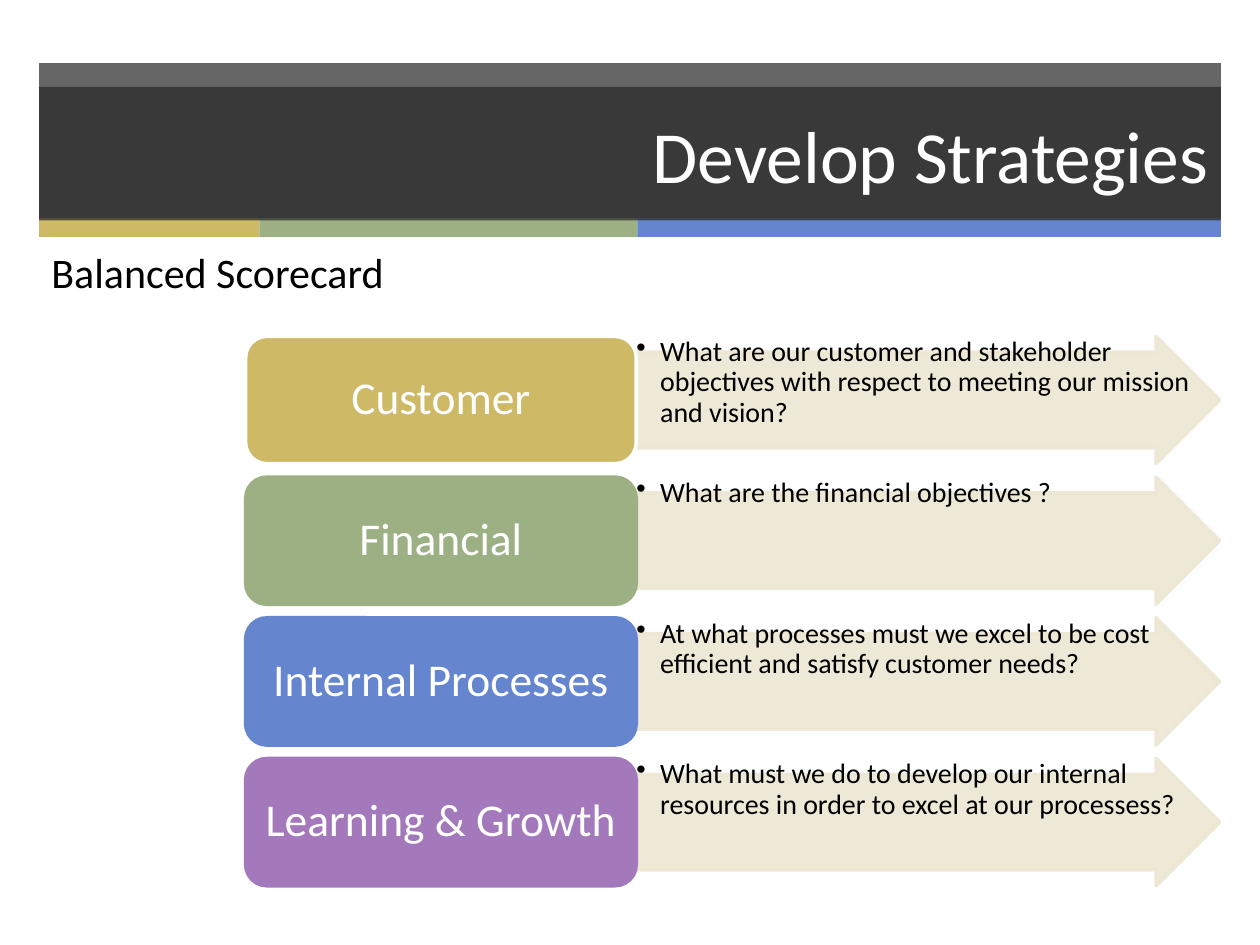
import dataclasses

import pptx
import pptx.dml.color
import pptx.enum.shapes
import pptx.enum.text
import pptx.oxml
import pptx.oxml.ns
import pptx.util

Shapes = pptx.enum.shapes.MSO_SHAPE
Align = pptx.enum.text.PP_ALIGN
Anchor = pptx.enum.text.MSO_ANCHOR

SLIDE_WIDTH, SLIDE_HEIGHT = 10, 7.5
FONT = "Calibri"
WHITE, BLACK, DARK, SAND = "FFFFFF", "000000", "262626", "EDE6D3"
GOLD, GREEN, BLUE, PURPLE = "CEB966", "9CB084", "6585CF", "A379BB"


@dataclasses.dataclass
class Area:
    """A rectangle in percent of the slide's width and height."""
    left: float
    top: float
    width: float
    height: float

    def lengths(self) -> list:
        sizes = (SLIDE_WIDTH, SLIDE_HEIGHT) * 2
        shares = (self.left, self.top, self.width, self.height)
        return [pptx.util.Inches(size * share / 100)
                for size, share in zip(sizes, shares)]


@dataclasses.dataclass
class Perspective:
    name: str
    question: str
    color: str
    outline: str


HEADER = Area(3.1, 6.67, 93.8, 16.53)
TITLE = Area(3.1, 9.2, 93.8, 14.13)
SUBTITLE = Area(3.1, 25.47, 34.4, 6.67)
BANDS = [(17.5, GOLD), (30, GREEN), (46.3, BLUE)]
BAND_TOP, BAND_HEIGHT = 23.07, 2
ROW_TOP, ROW_PITCH, ROW_HEIGHT = 35.6, 14.89, 13.47
PERSPECTIVES = [
    Perspective("Customer", "What are our customer and stakeholder objectives "
                "with respect to meeting our mission and vision?", GOLD, WHITE),
    Perspective("Financial", "What are the financial objectives ?", GREEN, GREEN),
    Perspective("Internal Processes", "At what processes must we excel to be "
                "cost efficient and satisfy customer needs?", BLUE, BLUE),
    Perspective("Learning & Growth", "What must we do to develop our internal "
                "resources in order to excel at our processess?", PURPLE, PURPLE),
]


def paint(target, color: str, opacity: int = 100) -> None:
    """Give a fill format a solid colour, see-through below 100 percent."""
    target.solid()
    target.fore_color.rgb = pptx.dml.color.RGBColor.from_string(color)
    if opacity < 100:
        color_element = target._xPr.find(".//" + pptx.oxml.ns.qn("a:srgbClr"))
        color_element.append(pptx.oxml.parse_xml(
            f'<a:alpha {pptx.oxml.ns.nsdecls("a")} val="{opacity * 1000}"/>'))


def write(shape, text: str, size: int, color: str, align=Align.LEFT,
          anchor=Anchor.TOP, inset: tuple = (0.1, 0.05)):
    """Set a shape's only paragraph and return it."""
    frame = shape.text_frame
    frame.word_wrap = True
    frame.vertical_anchor = anchor
    frame.margin_left = frame.margin_right = pptx.util.Inches(inset[0])
    frame.margin_top = frame.margin_bottom = pptx.util.Inches(inset[1])
    paragraph = frame.paragraphs[0]
    paragraph.text = text
    paragraph.alignment = align
    paragraph.font.name = FONT
    paragraph.font.size = pptx.util.Pt(size)
    paint(paragraph.font.fill, color)
    return paragraph


def add_block(slide, kind, area: Area, color: str, outline: str = "",
              opacity: int = 100):
    shape = slide.shapes.add_shape(kind, *area.lengths())
    shape.shadow.inherit = False
    paint(shape.fill, color, opacity)
    if outline:
        shape.line.width = pptx.util.Pt(2)
        paint(shape.line.fill, outline, opacity)
    else:
        shape.line.fill.background()
    return shape


def add_bullet(paragraph) -> None:
    properties = paragraph._p.get_or_add_pPr()
    indent = pptx.util.Inches(0.19)
    properties.set("marL", str(indent))
    properties.set("indent", str(-indent))
    properties.insert_element_before(pptx.oxml.parse_xml(
        f'<a:buChar {pptx.oxml.ns.nsdecls("a")} char="•"/>'),
        "a:tabLst", "a:defRPr", "a:extLst")


def add_header(slide, text: str) -> None:
    title = slide.shapes.title
    # Backdrop and coloured bands lie behind the title
    backdrop = [add_block(slide, Shapes.RECTANGLE, HEADER, DARK, opacity=70)]
    left = HEADER.left
    for width, color in BANDS:
        area = Area(left, BAND_TOP, width, BAND_HEIGHT)
        backdrop.append(add_block(slide, Shapes.RECTANGLE, area, color))
        left += width
    for shape in backdrop:
        title.element.addprevious(shape.element)
    # Title bar
    title.left, title.top, title.width, title.height = TITLE.lengths()
    paint(title.fill, DARK, 70)
    write(title, text, 42, WHITE, Align.RIGHT, Anchor.MIDDLE)
    title.text_frame.auto_size = pptx.enum.text.MSO_AUTO_SIZE.NONE


def add_perspective(slide, row: int, item: Perspective) -> None:
    top = ROW_TOP + row * ROW_PITCH
    arrow_area = Area(50.4, top, 46.4, ROW_HEIGHT)
    # Arrow with its question
    arrow = add_block(slide, Shapes.RIGHT_ARROW, arrow_area, SAND, SAND, 90)
    arrow.adjustments[0], arrow.adjustments[1] = 0.75, 0.5
    question = slide.shapes.add_textbox(*arrow_area.lengths())
    paragraph = write(question, item.question, 16, BLACK, inset=(0.01, 0.01))
    paragraph.line_spacing = 0.9
    add_bullet(paragraph)
    # Coloured box with the name
    box = add_block(slide, Shapes.ROUNDED_RECTANGLE,
                    Area(19.5, top, 31, ROW_HEIGHT), item.color, item.outline)
    label = write(box, item.name, 26, WHITE, Align.CENTER, Anchor.MIDDLE)
    label.line_spacing = 0.9


def main() -> None:
    presentation = pptx.Presentation()
    presentation.slide_width = pptx.util.Inches(SLIDE_WIDTH)
    presentation.slide_height = pptx.util.Inches(SLIDE_HEIGHT)
    title_only = presentation.slide_layouts.get_by_name("Title Only")
    slide = presentation.slides.add_slide(title_only)

    add_header(slide, "Develop Strategies")
    for row, item in enumerate(PERSPECTIVES):
        add_perspective(slide, row, item)
    subtitle = slide.shapes.add_textbox(*SUBTITLE.lengths())
    write(subtitle, "Balanced Scorecard", 24, BLACK)

    presentation.save("out.pptx")


if __name__ == "__main__":
    main()
